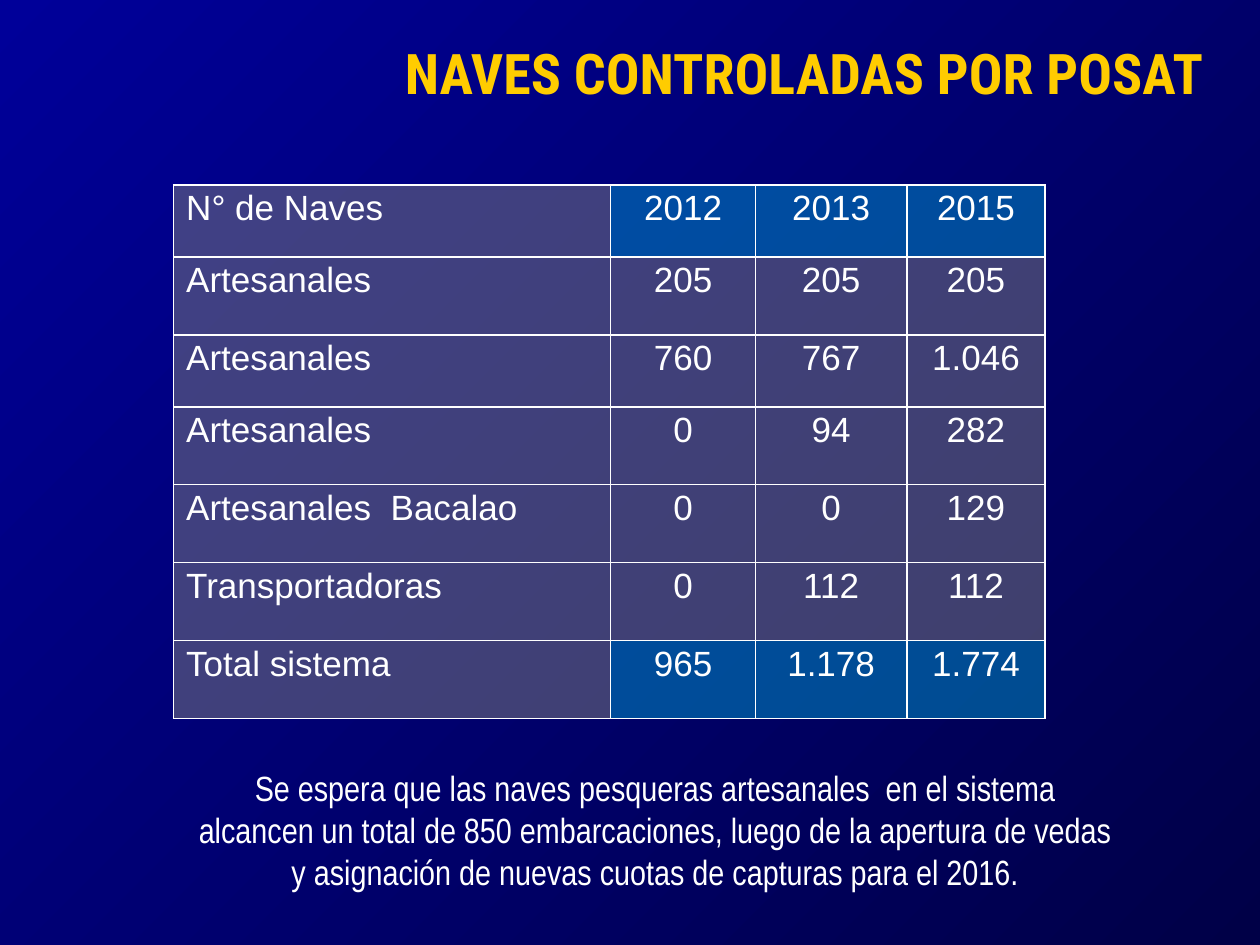
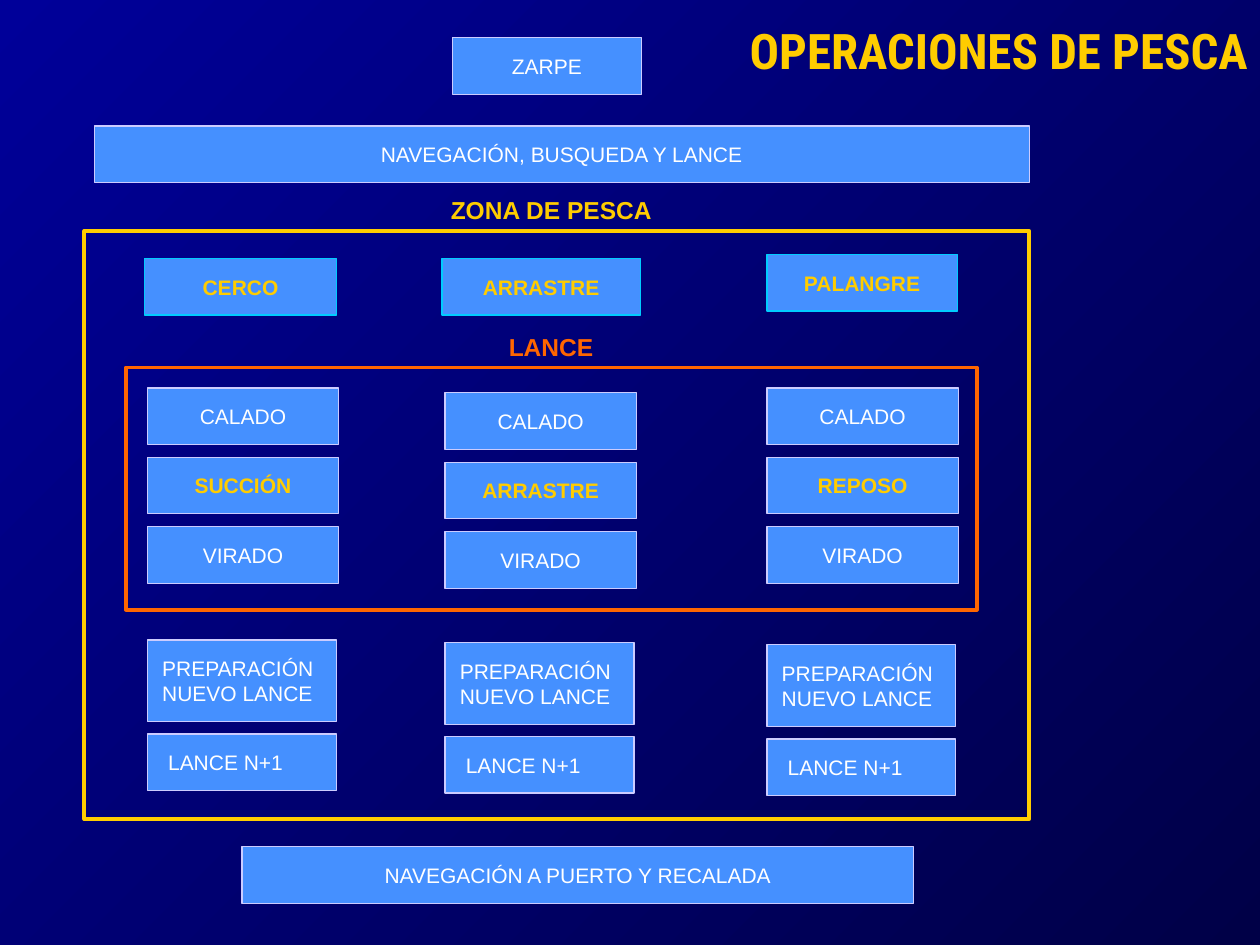
from lxml import etree
from pptx import Presentation
from pptx.dml.color import RGBColor
from pptx.enum.shapes import MSO_SHAPE
from pptx.enum.text import MSO_ANCHOR, MSO_AUTO_SIZE, PP_ALIGN
from pptx.oxml.ns import qn
from pptx.util import Cm, Pt

RECT = MSO_SHAPE.RECTANGLE
MIDDLE, TOP = MSO_ANCHOR.MIDDLE, MSO_ANCHOR.TOP
FIXED = MSO_AUTO_SIZE.NONE
LEFT, CENTER, RIGHT = PP_ALIGN.LEFT, PP_ALIGN.CENTER, PP_ALIGN.RIGHT

BLUE = RGBColor(0x00, 0x00, 0x99)
NAVY = RGBColor(0x00, 0x00, 0x47)
GOLD = RGBColor(0xFF, 0xCC, 0x00)
WHITE = RGBColor(0xFF, 0xFF, 0xFF)
ORANGE = RGBColor(0xFF, 0x66, 0x00)
SKY = RGBColor(0x45, 0x90, 0xFF)
CYAN = RGBColor(0x00, 0xCC, 0xFF)
LILAC = RGBColor(0xCC, 0xCC, 0xFF)
GRAY = RGBColor(0x80, 0x80, 0x80)
TEAL = RGBColor(0x00, 0x99, 0xCC)

HEAD, BODY, NARROW = "Roboto Condensed", "Arial", "Arial Narrow"
PAD = (0.25, 0.13, 0.25, 0.13)
INSET = 0.3


class Deck:
    def __init__(self):
        self.prs = Presentation()
        self.prs.slide_width, self.prs.slide_height = Cm(25.4), Cm(19.05)
        fill = self.prs.slide_master.background.fill
        fill.gradient()
        fill.gradient_angle = 315
        for stop, color, pos in zip(fill.gradient_stops, (BLUE, NAVY), (0, 1)):
            stop.color.rgb = color
            stop.position = pos

    def add(self, title, size, box):
        self.slide = self.prs.slides.add_slide(self.prs.slide_layouts[5])
        shape = self.slide.shapes.title
        shape.left, shape.top, shape.width, shape.height = map(Cm, box)
        self.fit(shape.text_frame, title, size, GOLD, HEAD, RIGHT,
                 bold=True, anchor=MIDDLE, space=0.95)

    def fit(self, frame, text, size, color, font=BODY, align=CENTER,
            bold=False, anchor=TOP, space=1.0, pad=PAD):
        frame.word_wrap = True
        frame.auto_size = FIXED
        frame.vertical_anchor = anchor
        (frame.margin_left, frame.margin_top,
         frame.margin_right, frame.margin_bottom) = map(Cm, pad)
        self.style(frame.paragraphs[0], text, size, color, font, align, bold, space)

    def style(self, para, text, size, color, font, align, bold, space):
        para.text = text
        para.alignment = align
        para.line_spacing = space
        para.font.name, para.font.size = font, Pt(size)
        para.font.bold = bold
        para.font.color.rgb = color

    def label(self, text, box, size, color, font=BODY, bold=False):
        shape = self.slide.shapes.add_textbox(*map(Cm, box))
        self.fit(shape.text_frame, text, size, color, font, bold=bold)

    def frame(self, box, color, width=2.25):
        shape = self.slide.shapes.add_shape(RECT, *map(Cm, box))
        shape.shadow.inherit = False
        shape.fill.background()
        shape.line.color.rgb = color
        shape.line.width = Pt(width)
        return shape

    def step(self, text, box, key=False, edge=LILAC, align=CENTER, shift=0):
        shape = self.frame(box, edge, 0.75)
        shape.fill.solid()
        shape.fill.fore_color.rgb = SKY
        self.fit(shape.text_frame, text, 12, GOLD if key else WHITE,
                 align=align, bold=key, anchor=MIDDLE,
                 pad=(INSET + shift, INSET, INSET, INSET))

    def table(self, rows, spot, wide, high):
        table = self.slide.shapes.add_table(
            len(rows), len(wide), *map(Cm, (*spot, sum(wide), sum(high)))).table
        for col, width in zip(table.columns, wide):
            col.width = Cm(width)
        for row, height in zip(table.rows, high):
            row.height = Cm(height)
        ends = (0, len(rows) - 1)
        for r, row in enumerate(rows):
            for c, text in enumerate(row):
                cell = table.cell(r, c)
                self.style(cell.text_frame.paragraphs[0], text, 20, WHITE, BODY,
                           CENTER if c else LEFT, False, 0.95)
                self.paint(cell, TEAL if c and r in ends else GRAY)

    def paint(self, cell, color):
        cell.fill.solid()
        cell.fill.fore_color.rgb = color
        props = cell._tc.tcPr
        tint = props.find(".//" + qn("a:srgbClr"))
        etree.SubElement(tint, qn("a:alpha"), val="50000")
        for i, side in enumerate(("lnL", "lnR", "lnT", "lnB")):
            line = etree.Element(qn("a:" + side), w=str(Pt(1)))
            solid = etree.SubElement(line, qn("a:solidFill"))
            etree.SubElement(solid, qn("a:srgbClr"), val=str(WHITE))
            props.insert(i, line)


def fleet(deck):
    deck.add("NAVES CONTROLADAS POR POSAT", 32, (4.5, 0.71, 20.02, 1.6))
    rows = (
        ("N° de Naves", "2012", "2013", "2015"),
        ("Artesanales", "205", "205", "205"),
        ("Artesanales", "760", "767", "1.046"),
        ("Artesanales", "0", "94", "282"),
        ("Artesanales  Bacalao", "0", "0", "129"),
        ("Transportadoras", "0", "112", "112"),
        ("Total sistema", "965", "1.178", "1.774"),
    )
    low, tall = 1.45, 1.57
    deck.table(rows, (3.5, 3.73), (8.81, 2.92, 3.05, 2.79),
               (low, tall, low, tall, tall, tall, tall))
    deck.label("Se espera que las naves pesqueras artesanales  en el sistema "
               "alcancen un total de 850 embarcaciones, luego de la apertura de "
               "vedas y asignación de nuevas cuotas de capturas para el 2016.",
               (3.71, 15.32, 19, 2.79), 20, WHITE, NARROW)


def fishing(deck):
    deck.add("OPERACIONES DE PESCA", 28, (3.81, 0, 21.59, 2.11))
    high, wide = 1.14, 3.86
    deck.step("ZARPE", (9.12, 0.76, 3.81, high))
    deck.step("NAVEGACIÓN, BUSQUEDA Y LANCE", (1.9, 2.54, 18.85, high))
    deck.step("NAVEGACIÓN A PUERTO Y RECALADA", (4.88, 17.07, 13.54, high))

    gears = (
        ("CERCO", (2.92, 5.21, 3.86, high), "SUCCIÓN", 2.97, 7.82, 12.9),
        ("ARRASTRE", (8.91, 5.21, 4, high), "ARRASTRE", 8.97, 7.92, 12.95),
        ("PALANGRE", (15.46, 5.13, 3.84, high), "REPOSO", 15.46, 7.82, 13),
    )
    for gear, box, act, left, top, prep in gears:
        deck.step(gear, box, key=True, edge=CYAN)
        for i, text in enumerate(("CALADO", act, "VIRADO")):
            deck.step(text, (left, top + 1.4 * i, wide, high), key=text == act)
        deck.step("PREPARACIÓN NUEVO LANCE", (left, prep, 3.81, 1.65), align=LEFT)
        deck.step("LANCE N+1", (left, prep + 1.9, 3.81, high), align=LEFT, shift=0.12)

    deck.frame((2.54, 7.41, 17.15, 4.88), ORANGE)
    deck.frame((1.7, 4.66, 19.05, 11.85), GOLD)
    deck.label("LANCE", (9.31, 6.56, 3.6, 0.85), 14, ORANGE, bold=True)
    deck.label("ZONA DE PESCA", (6.99, 3.81, 8.25, 0.85), 14, GOLD, bold=True)


def main():
    deck = Deck()
    fleet(deck)
    fishing(deck)
    deck.prs.save("out.pptx")


if __name__ == "__main__":
    main()
